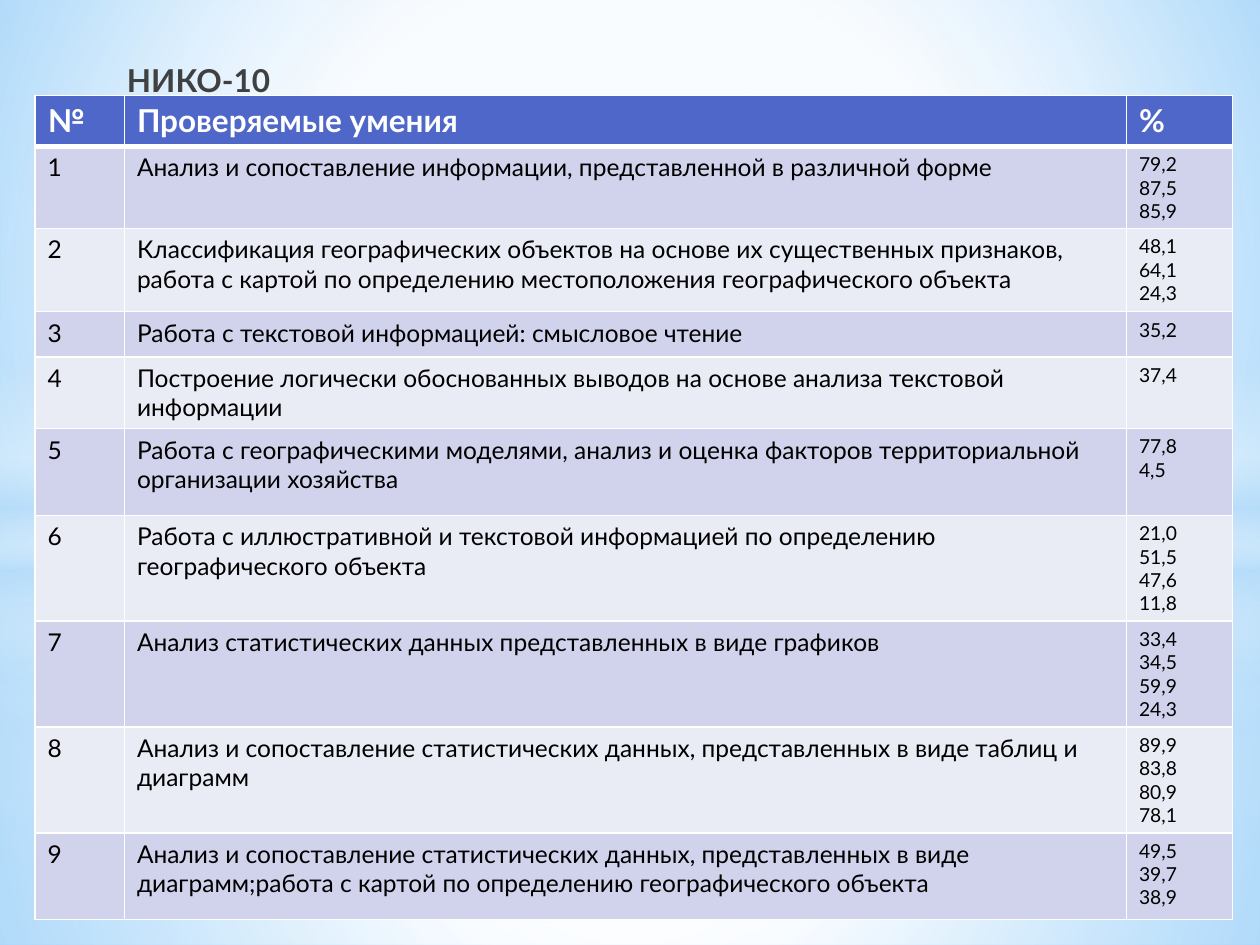
import pptx
import pptx.util
import pptx.dml.color
import pptx.enum.shapes
import pptx.enum.text
import pptx.oxml
import pptx.oxml.ns
from dataclasses import dataclass

Pt = pptx.util.Pt
RGB = pptx.dml.color.RGBColor.from_string
NS = pptx.oxml.ns.nsdecls("a")


@dataclass(frozen=True)
class Theme:
    font: str = "Lato"
    white: str = "FFFFFF"
    black: str = "000000"
    title: str = "404040"
    sky: str = "B4DCFA"
    header: str = "4E67C8"
    bands: tuple = ("D0D3EB", "E9EBF5")
    big: int = 18
    body: int = 14
    small: int = 11


T = Theme()


def grad_fill(stops, rect=None):
    """Circular gradient around rect (l, t, r, b in %), or a vertical one; stops are (pos, colour, alpha)."""
    gs = "".join(
        f'<a:gs pos="{pos * 1000}"><a:srgbClr val="{color}"><a:alpha val="{alpha * 1000}"/></a:srgbClr></a:gs>'
        for pos, color, alpha in stops)
    if rect:
        l, t, r, b = (v * 1000 for v in rect)
        way = f'<a:path path="circle"><a:fillToRect l="{l}" t="{t}" r="{r}" b="{b}"/></a:path>'
    else:
        way = '<a:lin ang="5400000" scaled="0"/>'
    return pptx.oxml.parse_xml(f'<a:gradFill {NS} rotWithShape="1"><a:gsLst>{gs}</a:gsLst>{way}</a:gradFill>')


def add_text(tf, lines, size, color, bold=False):
    for i, line in enumerate(lines):
        p = tf.paragraphs[0] if i == 0 else tf.add_paragraph()
        r = p.add_run()
        r.text = line
        r.font.name, r.font.size, r.font.bold = T.font, Pt(size), bold
        r.font.color.rgb = RGB(color)


prs = pptx.Presentation()
prs.slide_width, prs.slide_height = Pt(720), Pt(540)
s = prs.slides.add_slide(prs.slide_layouts[6])

# Background
s.background.fill.solid()
bg = s.element.find(".//" + pptx.oxml.ns.qn("p:bgPr"))
bg.replace(bg[0], grad_fill([(0, "9ED5FF", 100), (60, T.white, 100), (100, "5BB9FF", 100)], (20, 10, 20, 60)))

# Two sets of glow layers: floor, sky, horizon band, central light
RECT = pptx.enum.shapes.MSO_SHAPE.RECTANGLE
OVAL = pptx.enum.shapes.MSO_SHAPE.OVAL
CENTER = (50, 50, 50, 50)
band = [(0, T.white, 0), (29, T.white, 30), (45, T.sky, 40),
        (55, T.white, 26), (65, T.sky, 60), (100, T.white, 0)]
for horizon, band_top, extra, light_end in ((402, 297, 0, 56), (304.5, 209, 1, 54)):
    floor = [(0, T.white, 91 + extra), (37, T.white, 76 + extra), (100, T.sky, 79 + extra)]
    sky = [(0, T.white, 89 + extra), (48, T.white, 62 + extra), (100, T.sky, 79 + extra)]
    light = [(0, T.white, 100), (light_end, T.white, 0)]
    for kind, top, height, stops, rect in (
            (RECT, horizon, 540 - horizon, floor, CENTER),
            (RECT, 0, horizon, sky, CENTER),
            (RECT, band_top, 180, band, None),
            (OVAL, 126, 402, light, CENTER)):
        sp = s.shapes.add_shape(kind, 0, Pt(top), Pt(720), Pt(height))
        sp.shadow.inherit = False
        sp.line.fill.background()
        sp.fill.background()
        pr = sp.element.spPr
        pr.replace(pr.find(pptx.oxml.ns.qn("a:noFill")), grad_fill(stops, rect))

# Title
tf = s.shapes.add_textbox(Pt(65.5), Pt(26), Pt(584), Pt(34)).text_frame
tf.word_wrap = True
tf.vertical_anchor = pptx.enum.text.MSO_ANCHOR.BOTTOM
add_text(tf, ["НИКО-10"], T.big, T.title, bold=True)

# Skills: row height, tested skill, percentages
skills = [
    (46.9, ["Анализ и сопоставление информации, представленной в различной форме"], "79,2 87,5 85,9"),
    (47.6, ["Классификация географических объектов на основе их существенных признаков, "
            "работа с картой по определению местоположения географического объекта"], "48,1 64,1 24,3"),
    (26, ["Работа с текстовой информацией: смысловое чтение"], "35,2"),
    (40.8, ["Построение логически обоснованных выводов на основе анализа текстовой информации"], "37,4"),
    (49.6, ["Работа с географическими моделями, анализ и оценка факторов территориальной "
            "организации хозяйства"], "77,8 4,5"),
    (60.5, ["Работа с иллюстративной и текстовой информацией по определению",
            "географического объекта"], "21,0 51,5 47,6 11,8"),
    (60.5, ["Анализ статистических данных представленных в виде графиков"], "33,4 34,5 59,9 24,3"),
    (60.5, ["Анализ и сопоставление статистических данных, представленных в виде таблиц и диаграмм"],
     "89,9 83,8 80,9 78,1"),
    (49.6, ["Анализ и сопоставление статистических данных, представленных в виде "
            "диаграмм;работа с картой по определению географического объекта"], "49,5 39,7 38,9"),
]
rows = [(29, (["№"], ["Проверяемые умения"], ["%"]))]
rows += [(h, ([str(n)], skill, pct.split())) for n, (h, skill, pct) in enumerate(skills, 1)]

# Table
widths = (51.1, 572.6, 60.5)
tbl = s.shapes.add_table(len(rows), len(widths), Pt(20), Pt(54.6), Pt(sum(widths)),
                         Pt(sum(h for h, _ in rows))).table
tbl.horz_banding = False
for col, width in zip(tbl.columns, widths):
    col.width = Pt(width)
for i, (height, texts) in enumerate(rows):
    tbl.rows[i].height = Pt(height)
    for j, lines in enumerate(texts):
        cell = tbl.cell(i, j)
        cell.fill.solid()
        if i == 0:
            cell.fill.fore_color.rgb = RGB(T.header)
            add_text(cell.text_frame, lines, T.big, T.white, bold=True)
        else:
            cell.fill.fore_color.rgb = RGB(T.bands[(i - 1) % 2])
            add_text(cell.text_frame, lines, T.small if j == 2 else T.body, T.black)
        # White borders, thicker under the header
        for k, side in enumerate("LRTB"):
            thick = (i, side) in ((0, "B"), (1, "T"))
            cell._tc.get_or_add_tcPr().insert(k, pptx.oxml.parse_xml(
                f'<a:ln{side} {NS} w="{Pt(3 if thick else 1)}"><a:solidFill>'
                f'<a:srgbClr val="{T.white}"/></a:solidFill></a:ln{side}>'))

prs.save("out.pptx")
